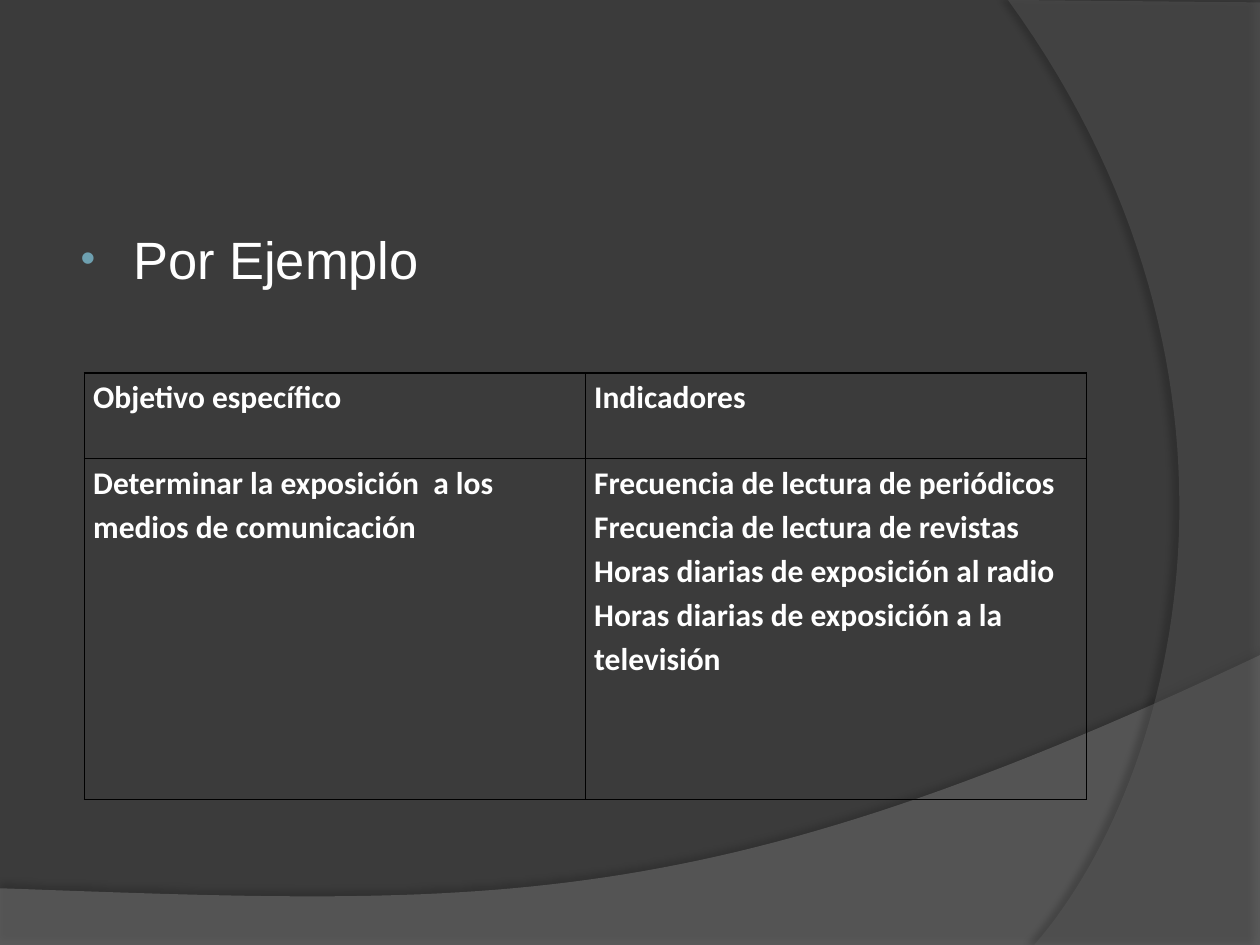
from lxml import etree
from pptx import Presentation
from pptx import util as u
from pptx.dml.color import RGBColor
from pptx.enum import text
from pptx.oxml import ns

COLOURS = {
    "background": "3B3B3B",
    "lower_swoop": "7F7F7F",
    "right_swoop": "5E5E5E",
    "text": "FFFFFF",
    "bullet": "6EA0B0",
    "black": "000000",
}


def add_xml(parent, tag, **attributes):
    return etree.SubElement(parent, ns.qn(tag), attributes)


def add_colour(parent, name, opacity=100):
    colour = add_xml(parent, "a:srgbClr", val=COLOURS[name])
    if opacity < 100:
        add_xml(colour, "a:alpha", val=str(opacity * 1000))


def curve(start, control_1, control_2, end, steps=60):
    """Points along a cubic curve, without its start."""
    points = []
    for step in range(1, steps + 1):
        t = step / steps
        weights = ((1 - t) ** 3, 3 * t * (1 - t) ** 2, 3 * t * t * (1 - t), t ** 3)
        corners = (start, control_1, control_2, end)
        points.append(tuple(sum(w * c[axis] for w, c in zip(weights, corners))
                            for axis in (0, 1)))
    return points


class SlideBuilder:
    body_font, body_size = "Arial", 30
    table_font, table_size = "Calibri", 18
    table_spacing = 1.15
    border_width = 1

    def __init__(self, slide):
        self.slide = slide

    def background(self, colour):
        fill = self.slide.background.fill
        fill.solid()
        fill.fore_color.rgb = RGBColor.from_string(COLOURS[colour])

    def run(self, paragraph, words, font, size, bold=False):
        run = paragraph.add_run()
        run.text = words
        run.font.name, run.font.size, run.font.bold = font, u.Pt(size), bold
        run.font.color.rgb = RGBColor.from_string(COLOURS["text"])

    def swoop(self, points, colour, opacity, shadow_opacity, distance, angle):
        builder = self.slide.shapes.build_freeform(
            u.Pt(points[0][0]), u.Pt(points[0][1]))
        builder.add_line_segments([(u.Pt(x), u.Pt(y)) for x, y in points[1:]])
        shape = builder.convert_to_shape()
        shape.fill.solid()
        shape.fill.fore_color.rgb = RGBColor.from_string(COLOURS[colour])
        shape.line.fill.background()
        shape.shadow.inherit = False
        properties = shape.element.spPr
        fill_colour = properties.find(ns.qn("a:solidFill"))[0]
        add_xml(fill_colour, "a:alpha", val=str(opacity * 1000))
        shadow = add_xml(properties.find(ns.qn("a:effectLst")), "a:outerShdw",
                         blurRad=str(u.Pt(4)), dist=str(u.Pt(distance)),
                         dir=str(angle * 60000), algn="ctr", rotWithShape="0")
        add_colour(shadow, "black", shadow_opacity)

    def bullet_text(self, words, left, top, width, height):
        box = self.slide.shapes.add_textbox(
            u.Pt(left), u.Pt(top), u.Pt(width), u.Pt(height))
        box.text_frame.word_wrap = True
        paragraph = box.text_frame.paragraphs[0]
        paragraph.space_before = u.Pt(4)
        self.run(paragraph, words, self.body_font, self.body_size)
        properties = paragraph._p.get_or_add_pPr()
        properties.set("marL", str(u.Pt(33)))
        properties.set("indent", str(u.Pt(-30)))
        add_colour(add_xml(properties, "a:buClr"), "bullet")
        add_xml(properties, "a:buSzPct", val="80000")
        add_xml(properties, "a:buFont", typeface=self.body_font)
        add_xml(properties, "a:buChar", char="•")

    def cell(self, cell, lines):
        cell.margin_left = cell.margin_right = u.Pt(5)
        cell.margin_top = cell.margin_bottom = 0
        cell.vertical_anchor = text.MSO_ANCHOR.TOP
        for index, line in enumerate(lines):
            frame = cell.text_frame
            paragraph = frame.add_paragraph() if index else frame.paragraphs[0]
            paragraph.line_spacing = self.table_spacing
            self.run(paragraph, line, self.table_font, self.table_size, True)
        properties = cell._tc.get_or_add_tcPr()
        for side in ("a:lnL", "a:lnR", "a:lnT", "a:lnB"):
            border = add_xml(properties, side, w=str(u.Pt(self.border_width)))
            add_colour(add_xml(border, "a:solidFill"), "black")
        cell.fill.background()

    def table(self, rows, left, top, column_width, row_heights):
        columns = len(rows[0])
        table = self.slide.shapes.add_table(
            len(rows), columns, u.Pt(left), u.Pt(top),
            u.Pt(column_width * columns), u.Pt(sum(row_heights))).table
        table.first_row = table.horz_banding = False
        for column in table.columns:
            column.width = u.Pt(column_width)
        for row, height, contents in zip(table.rows, row_heights, rows):
            row.height = u.Pt(height)
            for cell, lines in zip(row.cells, contents):
                self.cell(cell, lines)


def main():
    presentation = Presentation()
    presentation.slide_width, presentation.slide_height = u.Pt(720), u.Pt(540)
    builder = SlideBuilder(
        presentation.slides.add_slide(presentation.slide_layouts[6]))

    # Background and its two swoops
    builder.background("background")
    lower_edge = curve((720, 374.4), (402.5, 524.9), (281.5, 517.7), (0, 507.6))
    builder.swoop([(0, 507.6), (0, 540.5), (720, 540.5), (720, 374.4)] + lower_edge,
                  "lower_swoop", 45, 35, 3.5, 270)
    right_edge = curve((591, 540), (673.2, 445.7), (733, 216), (576, 0))
    builder.swoop([(720, 1.4), (720, 540), (591, 540)] + right_edge + [(720, 1.4)],
                  "right_swoop", 40, 45, 4, 180)

    # Table of objective and indicators
    builder.table([
        [["Objetivo específico"], ["Indicadores"]],
        [["Determinar la exposición  a los medios de comunicación"],
         ["Frecuencia de lectura de periódicos",
          "Frecuencia de lectura de revistas",
          "Horas diarias de exposición al radio",
          "Horas diarias de exposición a la televisión"]],
    ], left=48.25, top=213.25, column_width=286.3, row_heights=(48.7, 195))

    # Heading bullet
    builder.bullet_text("Por Ejemplo", 36, 126, 630, 64.8)

    presentation.save("out.pptx")


if __name__ == "__main__":
    main()
